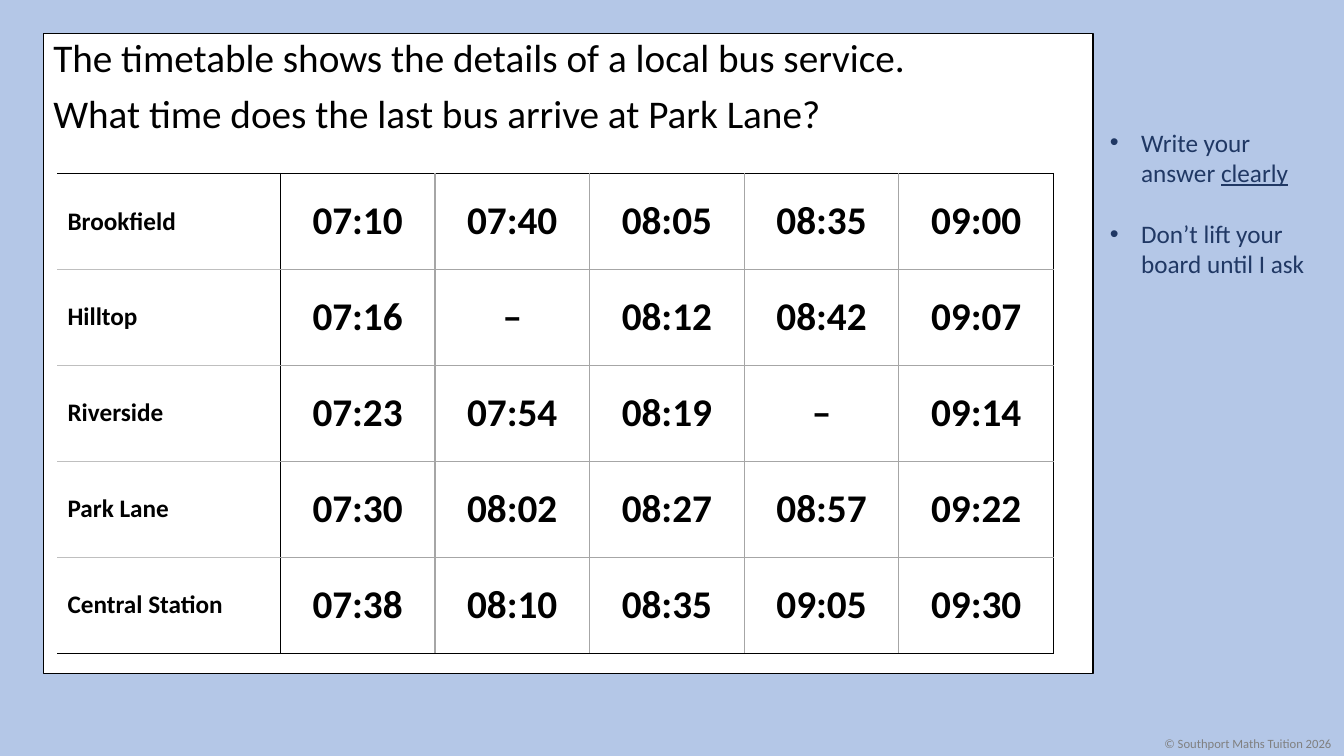
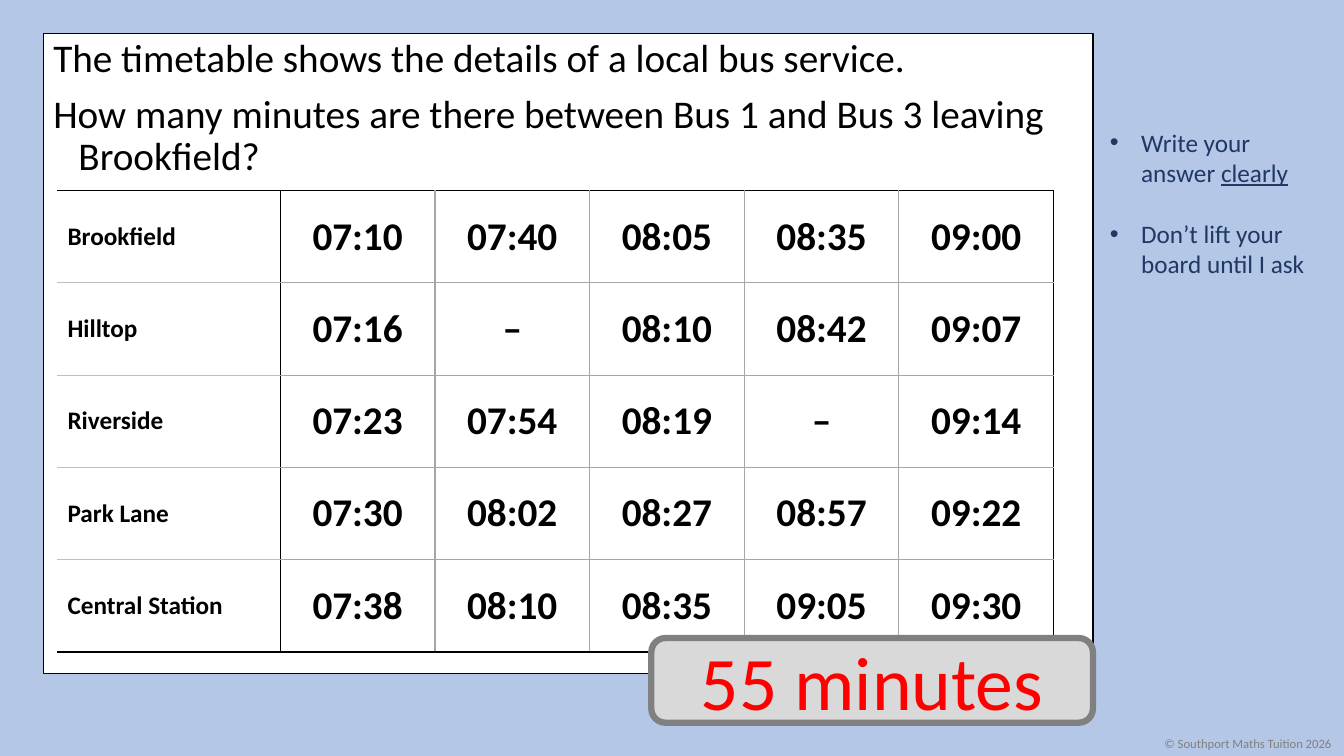
from typing import NamedTuple

from lxml.etree import SubElement
from pptx import Presentation
from pptx.dml.color import RGBColor
from pptx.enum.shapes import MSO_SHAPE as Shape
from pptx.enum.text import MSO_ANCHOR as Anchor, MSO_AUTO_SIZE as AutoSize, PP_ALIGN as Align
from pptx.oxml.ns import qn
from pptx.util import Inches, Pt

FONT = "Calibri"
COLORS = {
    "background": "B4C7E7",
    "white": "FFFFFF",
    "black": "000000",
    "grid": "A6A6A6",
    "label_grid": "BFBFBF",
    "tips": "203864",
    "grey": "808080",
    "answer_fill": "D9D9D9",
    "answer": "FF0000",
}


class Box(NamedTuple):
    left: float
    top: float
    width: float
    height: float

    def lengths(self) -> list:
        return [Inches(v) for v in self]


class Question(NamedTuple):
    text: str
    table_box: Box
    hilltop_bus_3: str
    answer: str = ""


PANEL = Box(0.43, 0.33, 10.41, 6.35)
TIPS = Box(10.91, 1.21, 2.32, 1.62)
COPYRIGHT = Box(11.45, 7.25, 1.88, 0.25)
ANSWER = Box(6.46, 6.33, 4.38, 0.84)
STOP_WIDTH = 2.21

INTRO = "The timetable shows the details of a local bus service."
TIMETABLE = [
    ["Brookfield", "07:10", "07:40", "08:05", "08:35", "09:00"],
    ["Hilltop", "07:16", "–", "08:12", "08:42", "09:07"],
    ["Riverside", "07:23", "07:54", "08:19", "–", "09:14"],
    ["Park Lane", "07:30", "08:02", "08:27", "08:57", "09:22"],
    ["Central Station", "07:38", "08:10", "08:35", "09:05", "09:30"],
]
QUESTIONS = [
    Question("What time does the last bus arrive at Park Lane?",
             Box(0.57, 1.72, 9.88, 4.76), "08:12"),
    Question("How many minutes are there between Bus 1 and Bus 3 leaving Brookfield?",
             Box(0.57, 1.89, 9.88, 4.58), "08:10", "55 minutes"),
]


def rgb(name: str) -> RGBColor:
    return RGBColor.from_string(COLORS[name])


def format_runs(p, size: float, color: str, bold: bool = False) -> None:
    for r in p.runs:
        r.font.name = FONT
        r.font.size = Pt(size)
        r.font.bold = bold
        r.font.color.rgb = rgb(color)


def set_indent(p, inches: float):
    """Hang the first line back to the margin and return the pPr element."""
    pPr = p._p.get_or_add_pPr()
    pPr.set("marL", str(Inches(inches)))
    pPr.set("indent", str(-Inches(inches)))
    return pPr


def add_shape(s, kind, box: Box, fill: str, line: str, line_width: float):
    sp = s.shapes.add_shape(kind, *box.lengths())
    sp.shadow.inherit = False
    sp.fill.solid()
    sp.fill.fore_color.rgb = rgb(fill)
    sp.line.color.rgb = rgb(line)
    sp.line.width = Pt(line_width)
    return sp


def add_text_frame(s, box: Box, wrap: bool = True, auto_size=AutoSize.NONE):
    tf = s.shapes.add_textbox(*box.lengths()).text_frame
    tf.word_wrap = wrap
    tf.auto_size = auto_size
    return tf


def add_tips(s) -> None:
    tf = add_text_frame(s, TIPS, auto_size=AutoSize.SHAPE_TO_FIT_TEXT)
    tf.text = "Write your answer \nDon’t lift your board until I ask"
    first, second = tf.paragraphs
    r = first.add_run()
    r.text = "clearly"
    r.font.underline = True
    second.space_before = Pt(22)
    for p in tf.paragraphs:
        pPr = set_indent(p, 0.31)
        SubElement(pPr, qn("a:buFont"), typeface="Arial")
        SubElement(pPr, qn("a:buChar"), char="•")
        format_runs(p, 18, "tips")


def add_base(s) -> None:
    """Draw the background, panel, tips and copyright line."""
    s.background.fill.solid()
    s.background.fill.fore_color.rgb = rgb("background")
    add_shape(s, Shape.RECTANGLE, PANEL, "white", "black", 1)
    add_tips(s)
    tf = add_text_frame(s, COPYRIGHT, False, AutoSize.SHAPE_TO_FIT_TEXT)
    tf.text = "© Southport Maths Tuition 2026"
    format_runs(tf.paragraphs[0], 9, "grey")


def add_question(s, text: str) -> None:
    tf = add_text_frame(s, PANEL)
    tf.text = f"{INTRO}\n{text}"
    for i, p in enumerate(tf.paragraphs):
        set_indent(p, 0.25)
        p.line_spacing = 0.9
        p.space_before = Pt(10 if i else 0)
        format_runs(p, 28, "black")


def set_borders(cell, row: int, col: int, last_row: int, last_col: int) -> None:
    inner = "grid" if col else "label_grid"
    edges = {
        "L": {0: None, 1: "black"}.get(col, "grid"),
        "R": "black" if col in (0, last_col) else "grid",
        "T": inner if row else "black",
        "B": "black" if row == last_row else inner,
    }
    tcPr = cell._tc.get_or_add_tcPr()
    for side, color in edges.items():
        ln = SubElement(tcPr, qn(f"a:ln{side}"), w=str(Pt(1)))
        if color is None:
            SubElement(ln, qn("a:noFill"))
        else:
            fill = SubElement(ln, qn("a:solidFill"))
            SubElement(fill, qn("a:srgbClr"), val=COLORS[color])


def add_timetable(s, box: Box, hilltop_bus_3: str) -> None:
    rows, cols = len(TIMETABLE), len(TIMETABLE[0])
    table = s.shapes.add_table(rows, cols, *box.lengths()).table
    table.first_row = table.horz_banding = False
    for col, column in enumerate(table.columns):
        column.width = Inches((box.width - STOP_WIDTH) / (cols - 1) if col else STOP_WIDTH)
    for row, texts in enumerate(TIMETABLE):
        for col, text in enumerate(texts):
            cell = table.cell(row, col)
            cell.text = hilltop_bus_3 if (row, col) == (1, 3) else text
            cell.vertical_anchor = Anchor.MIDDLE
            set_borders(cell, row, col, rows - 1, cols - 1)
            cell.fill.background()
            p = cell.text_frame.paragraphs[0]
            p.alignment = Align.CENTER if col else Align.LEFT
            format_runs(p, 28 if col else 18, "black", bold=True)


def add_answer(s, text: str) -> None:
    sp = add_shape(s, Shape.ROUNDED_RECTANGLE, ANSWER, "answer_fill", "grey", 4.5)
    tf = sp.text_frame
    tf.text = text
    tf.vertical_anchor = Anchor.MIDDLE
    tf.margin_left = tf.margin_right = Inches(0.11)
    p = tf.paragraphs[0]
    p.alignment = Align.CENTER
    format_runs(p, 54, "answer")


def main() -> None:
    prs = Presentation()
    prs.slide_width, prs.slide_height = Inches(13.33), Inches(7.5)
    for question in QUESTIONS:
        s = prs.slides.add_slide(prs.slide_layouts[6])
        add_base(s)
        add_question(s, question.text)
        add_timetable(s, question.table_box, question.hilltop_bus_3)
        if question.answer:
            add_answer(s, question.answer)
    prs.save("out.pptx")


if __name__ == "__main__":
    main()
